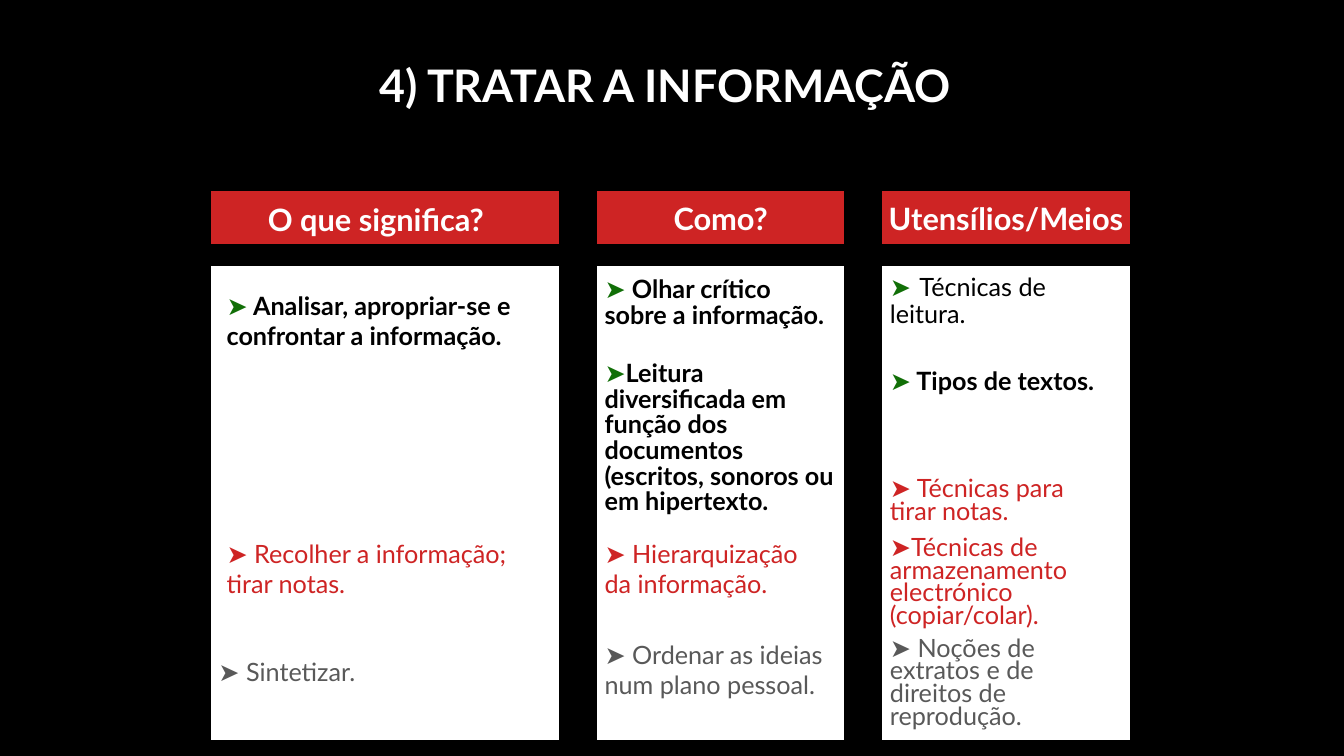
from pptx import Presentation
from pptx.dml.color import RGBColor
from pptx.enum.shapes import MSO_SHAPE
from pptx.enum.text import MSO_ANCHOR, MSO_AUTO_SIZE, PP_ALIGN
from pptx.util import Pt

# Content
TITLE = "4) TRATAR A INFORMAÇÃO"
MARKER = "➤"
# Column: heading, width, notes
# Note: text, stage, left offset, top, width, height, line spacing
COLUMNS = [
    ("O que significa?", 252, [
        (" Analisar, apropriar-se e confrontar a informação.", "analyse", 5.8, 203.8, 240, 50.4, 1),
        (" Recolher a informação; tirar notas.", "collect", 5.8, 380.9, 246, 50.4, 1),
        (" Sintetizar.", "synthesise", 0, 465.1, 246, 28.8, 1),
    ]),
    ("Como?", 180, [
        (" Olhar crítico sobre a informação.", "analyse", 0, 195.1, 180, 62.6, 0.85),
        ("Leitura diversificada em função dos documentos (escritos, sonoros ou em hipertexto.",
         "analyse", 0, 254.9, 180, 117.4, 0.85),
        (" Hierarquização da informação.", "collect", 0, 380.9, 174, 50.4, 1),
        (" Ordenar as ideias num plano pessoal.", "synthesise", 0, 452.9, 174, 72, 1),
    ]),
    ("Utensílios/Meios", 180, [
        ("Técnicas de leitura.", "reading", 0, 188.6, 180, 50.4, 0.85),
        (" Tipos de textos.", "analyse", 0, 260.6, 180, 25.9, 0.85),
        (" Técnicas para tirar notas.", "collect", 0, 339.1, 174, 39.6, 0.75),
        ("Técnicas de armazenamento electrónico (copiar/colar).",
         "collect", 0, 380.9, 180, 72, 0.75),
        (" Noções de extratos e de direitos de reprodução.",
         "synthesise", 0, 452.9, 174, 72, 0.75),
    ]),
]

THEME = {
    "font": "Lato", "gap font": "Times New Roman",
    "title size": 32, "heading size": 22, "note size": 18, "gap size": 24,
    "black": RGBColor.from_string("000000"),
    "white": RGBColor.from_string("FFFFFF"),
    "red": RGBColor.from_string("CE2424"),
    "green": RGBColor.from_string("116F07"),
    "grey": RGBColor.from_string("595959"),
    "border": 3.5,
}
# Stage: marker colour, text colour, bold text
STAGES = {
    "analyse": ("green", "black", True),
    "reading": ("green", "black", False),
    "collect": ("red", "red", False),
    "synthesise": ("grey", "grey", False),
}

# Layout
FIRST_LEFT, COLUMN_GAP = 149, 23.8
HEADING_TOP, HEADING_HEIGHT = 134.6, 41.8
PANEL_TOP, PANEL_HEIGHT = 188.6, 342

deck = Presentation()
deck.slide_width, deck.slide_height = Pt(960), Pt(540)
slide = deck.slides.add_slide(deck.slide_layouts[6])
slide.background.fill.solid()
slide.background.fill.fore_color.rgb = THEME["black"]


def add_panel(left, top, width, height, colour):
    panel = slide.shapes.add_shape(
        MSO_SHAPE.RECTANGLE, Pt(left), Pt(top), Pt(width), Pt(height))
    panel.shadow.inherit = False
    panel.fill.solid()
    panel.fill.fore_color.rgb = THEME[colour]
    panel.line.color.rgb = THEME["black"]
    panel.line.width = Pt(THEME["border"])
    return panel


def add_frame(left, top, width, height):
    frame = slide.shapes.add_textbox(Pt(left), Pt(top), Pt(width), Pt(height)).text_frame
    frame.word_wrap = True
    return frame


def write_heading(frame, text, size):
    paragraph = frame.paragraphs[0]
    paragraph.text = text
    paragraph.alignment = PP_ALIGN.CENTER
    paragraph.font.name = THEME["font"]
    paragraph.font.size = Pt(THEME[size])
    paragraph.font.bold = True
    paragraph.font.color.rgb = THEME["white"]
    return paragraph


def add_run(paragraph, text, colour, bold, font="font", size="note size"):
    run = paragraph.add_run()
    run.text = text
    run.font.name = THEME[font]
    run.font.size = Pt(THEME[size])
    run.font.bold = bold
    run.font.color.rgb = THEME[colour]


def add_note(column_left, text, stage, offset, top, width, height, spacing):
    frame = add_frame(column_left + offset, top, width, height)
    frame.auto_size = MSO_AUTO_SIZE.SHAPE_TO_FIT_TEXT
    paragraph = frame.paragraphs[0]
    paragraph.line_spacing = spacing
    marker_colour, text_colour, bold = STAGES[stage]
    add_run(paragraph, MARKER, marker_colour, True)
    if stage == "reading":
        add_run(paragraph, " ", text_colour, False, "gap font", "gap size")
    add_run(paragraph, text, text_colour, bold)


# Title
title = add_frame(0, 37.4, 950.4, 46.1)
title.vertical_anchor = MSO_ANCHOR.BOTTOM
write_heading(title, TITLE, "title size").line_spacing = 0.9

# Columns
left = FIRST_LEFT
for heading, width, notes in COLUMNS:
    add_panel(left, PANEL_TOP, width, PANEL_HEIGHT, "white")
    banner = add_panel(left, HEADING_TOP, width, HEADING_HEIGHT, "red")
    if left == FIRST_LEFT:
        label = add_frame(left + 5.8, 139.7, 227.5, 33.8)
    else:
        label = banner.text_frame
        label.word_wrap = False
        label.vertical_anchor = MSO_ANCHOR.MIDDLE
    write_heading(label, heading, "heading size")
    for note in notes:
        add_note(left, *note)
    left += width + COLUMN_GAP

deck.save("out.pptx")
